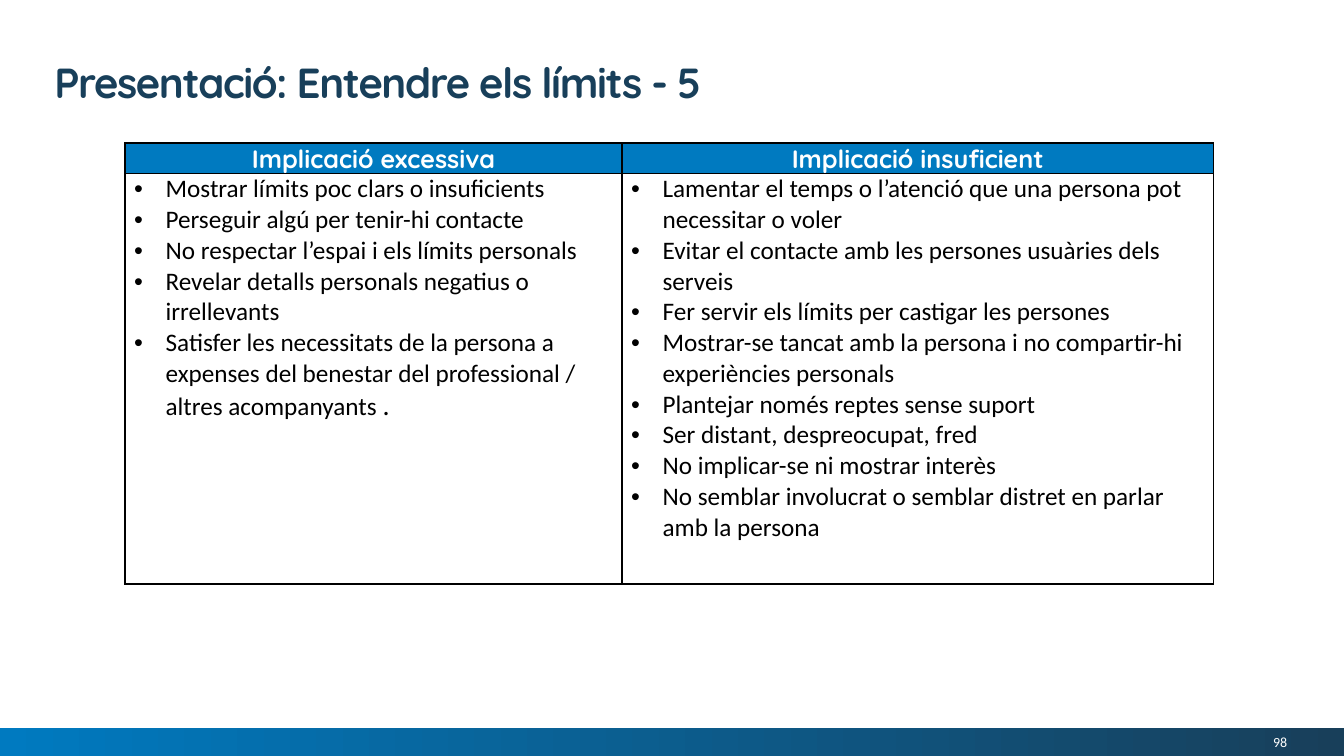
from lxml.etree import SubElement
from pptx import Presentation
from pptx.dml.color import RGBColor
from pptx.enum.shapes import MSO_SHAPE as Shape
from pptx.enum.text import MSO_ANCHOR as Anchor, PP_ALIGN as Align
from pptx.oxml import parse_xml
from pptx.oxml.ns import nsdecls, qn
from pptx.util import Pt

BLUE = RGBColor(0x00, 0x7A, 0xC0)
NAVY = RGBColor(0x18, 0x3F, 0x5A)
WHITE = RGBColor(0xFF, 0xFF, 0xFF)
BLACK = RGBColor(0x00, 0x00, 0x00)

HEADING_FONT = "Quicksand"
BODY_FONT = "Calibri"
BULLET_INDENT = Pt(22.5)

EXCESSIVE = [
    "Mostrar límits poc clars o insuficients",
    "Perseguir algú per tenir-hi contacte",
    "No respectar l’espai i els límits personals",
    "Revelar detalls personals negatius o irrellevants",
    "Satisfer les necessitats de la persona a expenses del benestar "
    "del professional / altres acompanyants ",
]
INSUFFICIENT = [
    "Lamentar el temps o l’atenció que una persona pot necessitar o voler",
    "Evitar el contacte amb les persones usuàries dels serveis",
    "Fer servir els límits per castigar les persones",
    "Mostrar-se tancat amb la persona i no compartir-hi experiències personals",
    "Plantejar només reptes sense suport",
    "Ser distant, despreocupat, fred",
    "No implicar-se ni mostrar interès",
    "No semblar involucrat o semblar distret en parlar amb la persona",
]
COLUMNS = [
    ("Implicació excessiva", EXCESSIVE, 355),
    ("Implicació insuficient", INSUFFICIENT, 422.6),
]


class SlideBuilder:
    def __init__(self, slide):
        self.slide = slide

    def style(self, paragraph, size, color, name=BODY_FONT, bold=False):
        font = paragraph.font
        font.size, font.name, font.bold = Pt(size), name, bold
        font.color.rgb = color

    def gradient_bar(self, left, top, width, height, colors):
        bar = self.slide.shapes.add_shape(
            Shape.RECTANGLE, Pt(left), Pt(top), Pt(width), Pt(height))
        bar.shadow.inherit = False
        bar.line.fill.background()
        bar.fill.gradient()
        bar.fill.gradient_angle = 0
        for position, (stop, color) in enumerate(zip(bar.fill.gradient_stops, colors)):
            stop.position = position
            stop.color.rgb = color

    def text_box(self, left, top, width, height, text):
        box = self.slide.shapes.add_textbox(Pt(left), Pt(top), Pt(width), Pt(height))
        frame = box.text_frame
        frame.word_wrap = True
        frame.text = text
        return frame

    def title(self, text):
        frame = self.text_box(31.7, 39.6, 771, 33.8, text)
        paragraph = frame.paragraphs[0]
        paragraph.line_spacing = Pt(33)
        self.style(paragraph, 30, NAVY, HEADING_FONT, True)
        paragraph.runs[0]._r.get_or_add_rPr().set("spc", "-100")

    def page_number(self, text):
        frame = self.text_box(789.8, 521.3, 129.6, 17.3, text)
        frame.margin_left = frame.margin_right = 0
        frame.margin_top = frame.margin_bottom = 0
        frame.vertical_anchor = Anchor.MIDDLE
        frame.paragraphs[0].alignment = Align.RIGHT
        self.style(frame.paragraphs[0], 10, WHITE)

    def prepare_cell(self, cell):
        """Set the margins and draw a thin border on all four sides."""
        cell.margin_left = cell.margin_right = Pt(6.5)
        cell.margin_top = cell.margin_bottom = 0
        properties = cell._tc.get_or_add_tcPr()
        for side in ("lnL", "lnR", "lnT", "lnB"):
            properties.append(parse_xml(
                f'<a:{side} {nsdecls("a")} w="{Pt(1)}"><a:solidFill>'
                f'<a:srgbClr val="{BLACK}"/></a:solidFill></a:{side}>'))

    def header_cell(self, cell, text):
        self.prepare_cell(cell)
        cell.fill.solid()
        cell.fill.fore_color.rgb = BLUE
        cell.vertical_anchor = Anchor.MIDDLE
        cell.text = text
        paragraph = cell.text_frame.paragraphs[0]
        paragraph.alignment = Align.CENTER
        self.style(paragraph, 18, WHITE, HEADING_FONT, True)

    def bullet_cell(self, cell, items):
        self.prepare_cell(cell)
        cell.fill.background()
        cell.text = "\n".join(items)
        for paragraph in cell.text_frame.paragraphs:
            properties = paragraph._p.get_or_add_pPr()
            properties.set("marL", str(BULLET_INDENT))
            properties.set("indent", str(-BULLET_INDENT))
            SubElement(properties, qn("a:buFont")).set("typeface", "Arial")
            SubElement(properties, qn("a:buChar")).set("char", "•")
            self.style(paragraph, 18, BLACK)

    def table(self, left, top, columns, row_heights):
        width = sum(column[2] for column in columns)
        table = self.slide.shapes.add_table(
            len(row_heights), len(columns), Pt(left), Pt(top),
            Pt(width), Pt(sum(row_heights))).table
        table.first_row = table.horz_banding = False
        for row, height in zip(table.rows, row_heights):
            row.height = Pt(height)
        for index, (heading, items, column_width) in enumerate(columns):
            table.columns[index].width = Pt(column_width)
            self.header_cell(table.cell(0, index), heading)
            self.bullet_cell(table.cell(1, index), items)
        return table


def main():
    presentation = Presentation()
    presentation.slide_width, presentation.slide_height = Pt(960), Pt(540)
    builder = SlideBuilder(presentation.slides.add_slide(presentation.slide_layouts[6]))

    builder.gradient_bar(0, 520, 960, 20, (BLUE, NAVY))
    builder.page_number("98")
    table = builder.table(89.3, 102.2, COLUMNS, (22, 293))
    full_stop = table.cell(1, 0).text_frame.paragraphs[-1].add_run()
    full_stop.text = "."
    full_stop.font.size = Pt(20)
    builder.title("Presentació: Entendre els límits - 5")

    presentation.save("out.pptx")


if __name__ == "__main__":
    main()
